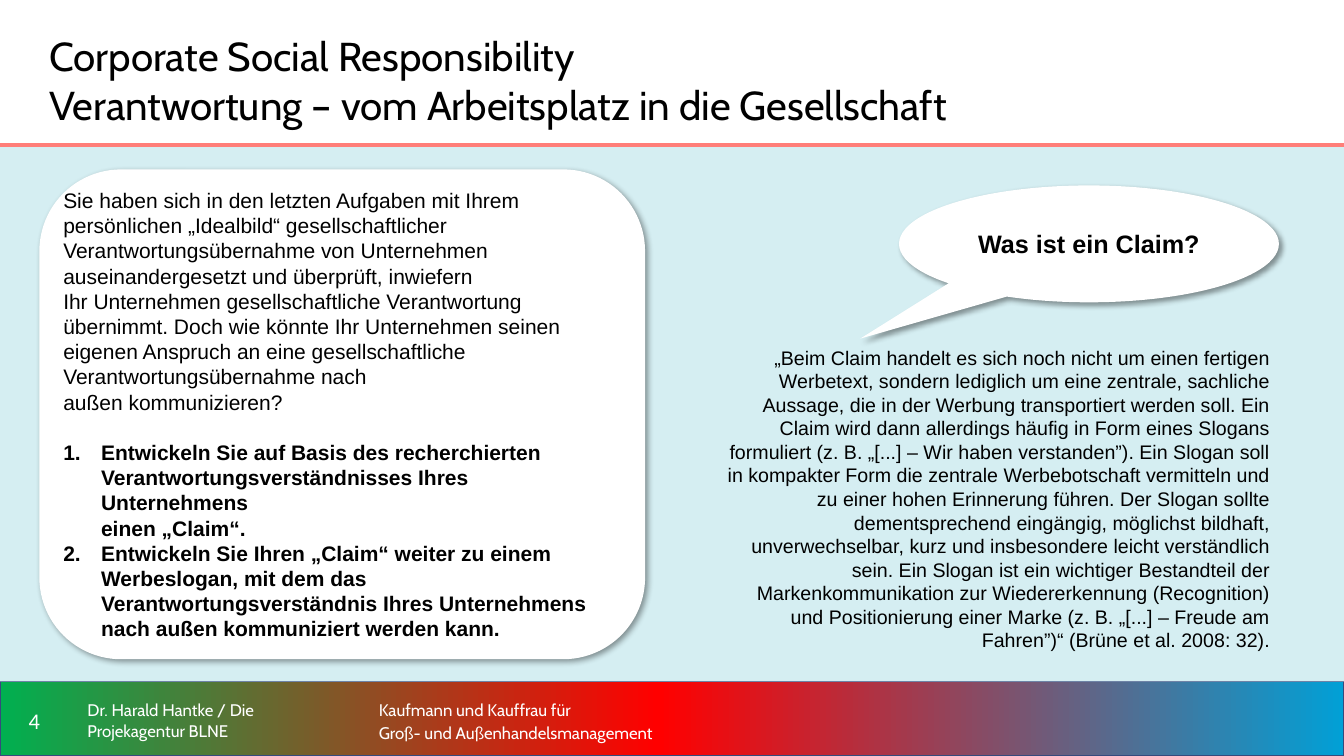
from copy import deepcopy
from pptx import Presentation
from pptx.util import Pt
from pptx.dml.color import RGBColor
from pptx.enum.shapes import MSO_SHAPE as Kind
from pptx.enum.text import MSO_ANCHOR as Anchor, MSO_AUTO_SIZE as Size, PP_ALIGN as Align
from pptx.oxml import parse_xml as to_node
from pptx.oxml.ns import nsdecls, qn

SHADE = (
    f'<a:effectLst {nsdecls("a")}><a:outerShdw blurRad="50800" dist="38100" '
    'dir="2700000" algn="tl" rotWithShape="0"><a:srgbClr val="000000">'
    '<a:alpha val="40000"/></a:srgbClr></a:outerShdw></a:effectLst>'
)


def color(code):
    return RGBColor.from_string(code)


class Page:
    def __init__(self, deck):
        self.slide = deck.slides.add_slide(deck.slide_layouts[6])
        self.body = {"name": "Arial", "size": 15, "bold": False}
        self.head = {"name": "Cabin", "size": 28.8}
        self.foot = {"name": "Cabin", "size": 12}
        self.black = "000000"
        self.white = "FFFFFF"

    def shape(self, kind, box, fill, edge=None, adjust=(), shade=False):
        item = self.slide.shapes.add_shape(kind, *map(Pt, box))
        for i, value in enumerate(adjust):
            item.adjustments[i] = value
        if isinstance(fill, str):
            item.fill.solid()
            item.fill.fore_color.rgb = color(fill)
        else:
            self.blend(item, fill)
        if edge:
            item.line.color.rgb = color(edge)
            item.line.width = Pt(1)
        else:
            item.line.fill.background()
        item.shadow.inherit = False
        if shade:
            props = item._element.spPr
            props.replace(props.find(qn("a:effectLst")), to_node(SHADE))
        return item

    def blend(self, item, stops):
        item.fill.gradient()
        item.fill.gradient_angle = 0
        first = item._element.spPr.find(".//" + qn("a:gs"))
        first.addnext(deepcopy(first))
        for stop, (place, code) in zip(item.fill.gradient_stops, stops):
            stop.position = place
            stop.color.rgb = color(code)

    def label(self, box, paras, font, code, **frame):
        item = self.slide.shapes.add_textbox(*map(Pt, box))
        self.set_text(item, paras, font, code, **frame)
        return item

    def set_text(self, item, paras, font, code, inset=(7.2, 3.6), **frame):
        text = item.text_frame
        sides = {"margin_left": inset[0], "margin_right": inset[0],
                 "margin_top": inset[1], "margin_bottom": inset[1]}
        looks = {"word_wrap": True, "auto_size": Size.NONE, "vertical_anchor": Anchor.MIDDLE}
        looks.update({key: Pt(value) for key, value in sides.items()})
        looks.update(frame)
        for key, value in looks.items():
            setattr(text, key, value)
        for i, para in enumerate(paras):
            line = text.paragraphs[0] if i == 0 else text.add_paragraph()
            self.para(line, font, code, **para)

    def para(self, line, font, code, words, indent=0, number=False, bold=None, **form):
        props = line._p.get_or_add_pPr()
        if indent:
            props.set("marL", str(Pt(indent)))
            props.set("indent", str(-Pt(indent)))
        if number:
            tint = f'<a:buClr {nsdecls("a")}><a:srgbClr val="{self.black}"/></a:buClr>'
            mark = f'<a:buAutoNum {nsdecls("a")} type="arabicPeriod"/>'
            for part in (tint, mark):
                props.append(to_node(part))
        for key, value in {"alignment": Align.LEFT, **form}.items():
            setattr(line, key, value)
        style = {**font, "size": Pt(font["size"])}
        if bold is not None:
            style["bold"] = bold
        for i, part in enumerate(words.split("\n")):
            if i:
                line.add_line_break()
            run = line.add_run()
            run.text = part
            for key, value in style.items():
                setattr(run.font, key, value)
            run.font.color.rgb = color(code)


def plain(words, **form):
    return {"words": words, **form}


TASK = (
    "Sie haben sich in den letzten Aufgaben mit Ihrem persönlichen „Idealbild“ "
    "gesellschaftlicher Verantwortungsübernahme von Unternehmen auseinandergesetzt "
    "und überprüft, inwiefern\nIhr Unternehmen gesellschaftliche Verantwortung "
    "übernimmt. Doch wie könnte Ihr Unternehmen seinen eigenen Anspruch an eine "
    "gesellschaftliche Verantwortungsübernahme nach\naußen kommunizieren?"
)
STEPS = [
    "Entwickeln Sie auf Basis des recherchierten Verantwortungsverständnisses "
    "Ihres Unternehmens\neinen „Claim“.",
    "Entwickeln Sie Ihren „Claim“ weiter zu einem Werbeslogan, mit dem das "
    "Verantwortungsverständnis Ihres Unternehmens nach außen kommuniziert werden kann.",
]
QUOTE = (
    "„Beim Claim handelt es sich noch nicht um einen fertigen Werbetext, sondern "
    "lediglich um eine zentrale, sachliche Aussage, die in der Werbung transportiert "
    "werden soll. Ein Claim wird dann allerdings häufig in Form eines Slogans "
    "formuliert (z. B. „[...] – Wir haben verstanden”). Ein Slogan soll in kompakter "
    "Form die zentrale Werbebotschaft vermitteln und zu einer hohen Erinnerung führen. "
    "Der Slogan sollte dementsprechend eingängig, möglichst bildhaft, unverwechselbar, "
    "kurz und insbesondere leicht verständlich sein. Ein Slogan ist ein wichtiger "
    "Bestandteil der Markenkommunikation zur Wiedererkennung (Recognition) und "
    "Positionierung einer Marke (z. B. „[...] – Freude am Fahren”)“ (Brüne et al. 2008: 32)."
)


def main():
    deck = Presentation()
    deck.slide_width, deck.slide_height = Pt(960), Pt(540)
    page = Page(deck)
    black, white = page.black, page.white

    page.shape(Kind.RECTANGLE, (0, 486.7, 960, 53.3),
               [(0, "00B050"), (0.49, "FF0000"), (1, "01A0D6")], edge="364A7D")
    page.shape(Kind.RECTANGLE, (0, 102.2, 960, 2.9), "FF7E79")
    page.shape(Kind.RECTANGLE, (0, 105.1, 960, 381.6), "D5EEF2")

    page.label((28.1, 14.4, 708.5, 85), [plain(
        "Corporate Social Responsibility\n"
        "Verantwortung – vom Arbeitsplatz in die Gesellschaft")], page.head, black)

    top, high = 492.5, 43.9
    page.label((0, top, 49, high), [plain("4", alignment=Align.CENTER)],
               {"name": "Calibri", "size": 16}, white)
    page.label((55.4, top, 200.2, high),
               [plain("Dr. Harald Hantke / Die Projekagentur BLNE")], page.foot, white)
    course = ["Kaufmann und Kauffrau für", "Groß- und Außenhandelsmanagement"]
    page.label((263.5, top, 301.7, high),
               [plain(words, indent=2.9, line_spacing=1.1) for words in course],
               page.foot, white)

    card = page.shape(Kind.ROUNDED_RECTANGLE, (28.1, 121, 432.7, 349.9), white,
                      adjust=[0.167], shade=True)
    steps = [plain(words, indent=27, number=True, bold=True) for words in STEPS]
    page.set_text(card, [plain(TASK, space_after=Pt(18)), *steps], page.body, black,
                  inset=(0, 0))

    page.label((507.6, 243.4, 406.8, 227.5), [plain(QUOTE, alignment=Align.RIGHT)],
               {**page.body, "size": 14}, black,
               vertical_anchor=Anchor.TOP, auto_size=Size.SHAPE_TO_FIT_TEXT)

    bubble = page.shape(Kind.OVAL_CALLOUT, (642.2, 132.5, 271.4, 83.5), white,
                        adjust=[-0.602, 0.81], shade=True)
    page.set_text(bubble, [plain("Was ist ein Claim?", alignment=Align.CENTER, bold=True)],
                  {**page.body, "size": 18}, black)

    deck.save("out.pptx")


if __name__ == "__main__":
    main()
